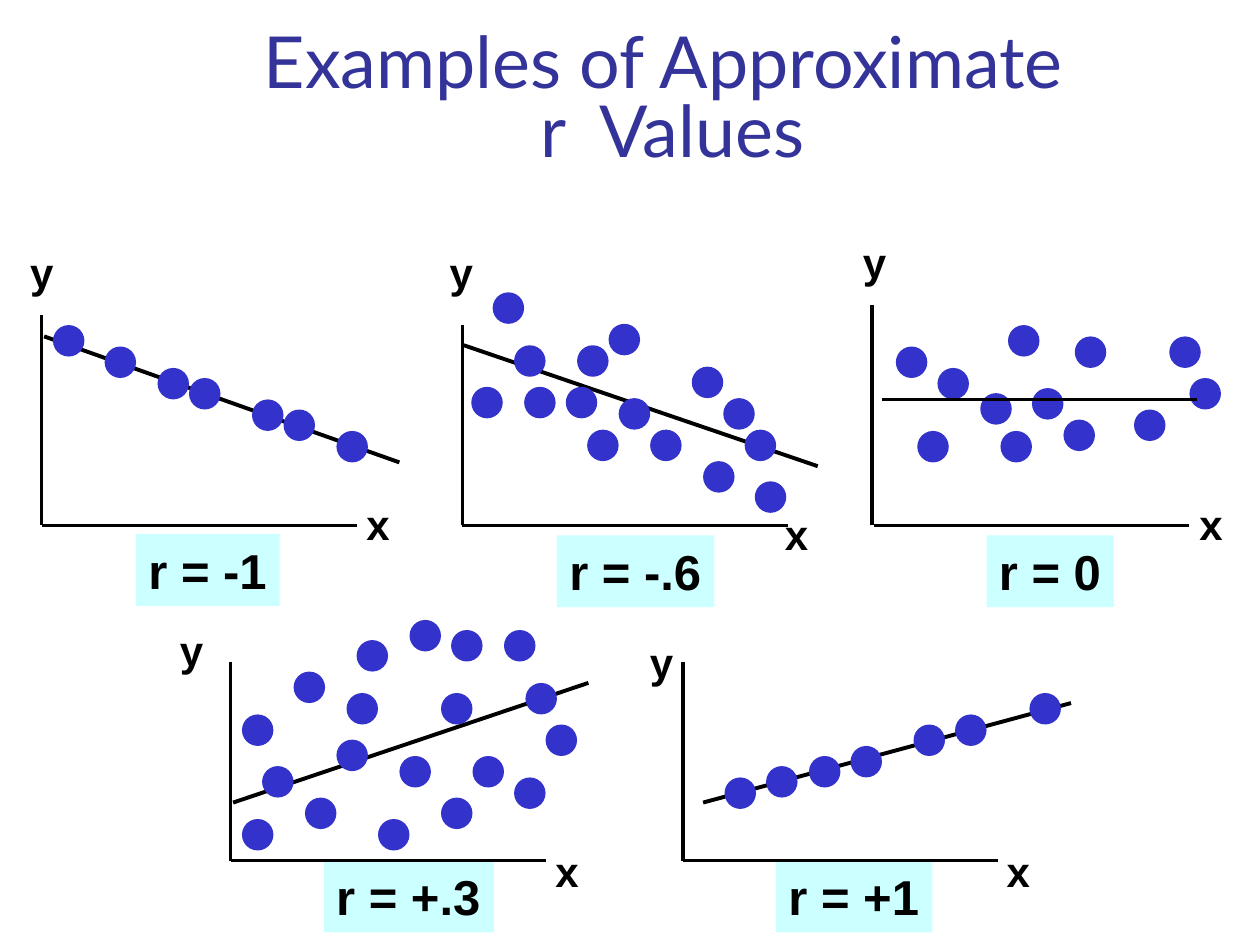
from pptx import Presentation
from pptx.dml.color import RGBColor
from pptx.enum.shapes import MSO_CONNECTOR, MSO_SHAPE
from pptx.enum.text import MSO_ANCHOR, MSO_AUTO_SIZE, PP_ALIGN
from pptx.oxml import parse_xml
from pptx.oxml.ns import nsdecls
from pptx.util import Inches, Pt

BLACK = RGBColor(0x00, 0x00, 0x00)
TITLE_BLUE = RGBColor(0x33, 0x33, 0x99)
DOT_BLUE = RGBColor(0x33, 0x33, 0xCC)
PALE_CYAN = RGBColor(0xCC, 0xFF, 0xFF)

DOT = 0.25            # dot diameter
LETTER = (0.39, 0.5)  # size of an axis letter box
LABEL_H = 0.57

TITLE = "Examples of Approximate \vr  Values"

# Each plot, in inches: axes as (x of y-axis, top, bottom, x-axis start, x-axis end),
# trend as (x1, y1, x2, y2), label as (left, top, width), dots as (left, top)
PLOTS = [
    {"r": "r = -1", "label": (1.08, 4.24, 1.14),
     "axes": (0.33, 2.5, 4.17, 0.33, 2.83), "trend": (0.35, 2.67, 3.17, 3.67),
     "y": (0.14, 1.91), "x": (2.81, 3.91),
     "dots": [(0.42, 2.58), (0.83, 2.75), (1.25, 2.92), (1.5, 3), (2, 3.17),
              (2.25, 3.25), (2.67, 3.42)]},
    {"r": "r = -.6", "label": (4.42, 4.25, 1.25),
     "axes": (3.67, 2.58, 4.17, 3.67, 6.25), "trend": (3.68, 2.74, 6.49, 3.7),
     "y": (3.47, 1.91), "x": (6.13, 3.99),
     "dots": [(3.74, 3.07), (3.91, 2.32), (4.08, 2.74), (4.16, 3.07), (4.49, 3.07),
              (4.58, 2.74), (4.66, 3.41), (4.83, 2.57), (4.91, 3.16), (5.16, 3.41),
              (5.49, 2.91), (5.58, 3.66), (5.74, 3.16), (5.91, 3.41), (5.99, 3.82)]},
    {"r": "r = 0", "label": (7.83, 4.25, 1.01),
     "axes": (6.92, 2.42, 4.17, 6.94, 9.44), "trend": (7, 3.17, 9.5, 3.17),
     "trend_on_top": True,
     "y": (6.75, 1.83), "x": (9.42, 3.91),
     "dots": [(7.11, 2.75), (7.28, 3.42), (7.44, 2.92), (7.78, 3.12), (7.94, 3.42),
              (8, 2.58), (8.19, 3.08), (8.44, 3.33), (8.53, 2.67), (9, 3.25),
              (9.28, 2.67), (9.44, 3)]},
    {"r": "r = +.3", "label": (2.57, 6.83, 1.35),
     "axes": (1.83, 5.25, 6.83, 1.83, 4.33), "trend": (1.85, 6.37, 4.67, 5.42),
     "y": (1.33, 4.91), "x": (4.31, 6.66),
     "dots": [(1.92, 5.67), (1.92, 6.5), (2.08, 6.08), (2.33, 5.33), (2.42, 6.33),
              (2.67, 5.87), (2.75, 5.5), (2.83, 5.08), (3, 6.5), (3.17, 6),
              (3.25, 4.92), (3.5, 5.5), (3.5, 6.33), (3.58, 5), (3.75, 6),
              (4, 5), (4.08, 6.17), (4.17, 5.42), (4.33, 5.75)]},
    {"r": "r = +1", "label": (6.16, 6.83, 1.24),
     "axes": (5.42, 5.25, 6.83, 5.42, 7.92), "trend": (5.58, 6.37, 8.5, 5.58),
     "y": (5.06, 5), "x": (7.89, 6.66),
     "dots": [(5.75, 6.17), (6.08, 6.08), (6.42, 6), (6.75, 5.92), (7.25, 5.75),
              (7.58, 5.67), (8.17, 5.5)]},
]


def add_line(s, x1, y1, x2, y2, width=2):
    line = s.shapes.add_connector(
        MSO_CONNECTOR.STRAIGHT, Inches(x1), Inches(y1), Inches(x2), Inches(y2))
    line.line.color.rgb = BLACK
    line.line.width = Pt(width)
    line._element.spPr.append(parse_xml(f"<a:effectLst {nsdecls('a')}/>"))


def add_shape(s, kind, left, top, width, height, fill):
    sp = s.shapes.add_shape(
        kind, Inches(left), Inches(top), Inches(width), Inches(height))
    sp.shadow.inherit = False
    sp.fill.solid()
    sp.fill.fore_color.rgb = fill
    sp.line.fill.background()
    return sp


def set_text(sp, text, size, font="Arial", color=BLACK, bold=True, align=PP_ALIGN.LEFT):
    tf = sp.text_frame
    tf.text = text
    tf.word_wrap = False
    tf.vertical_anchor = MSO_ANCHOR.TOP
    tf.auto_size = MSO_AUTO_SIZE.SHAPE_TO_FIT_TEXT
    p = tf.paragraphs[0]
    p.alignment = align
    for r in p.runs:
        r.font.name = font
        r.font.size = Pt(size)
        r.font.bold = bold
        r.font.color.rgb = color
    return tf


def add_textbox(s, left, top, width, height):
    return s.shapes.add_textbox(
        Inches(left), Inches(top), Inches(width), Inches(height))


def add_plot(s, plot):
    # Label with the r value
    left, top, width = plot["label"]
    sp = add_shape(s, MSO_SHAPE.RECTANGLE, left, top, width, LABEL_H, PALE_CYAN)
    set_text(sp, plot["r"], 28)

    # Axes and their letters
    axis_x, top, bottom, start, end = plot["axes"]
    add_line(s, axis_x, top, axis_x, bottom)
    add_line(s, start, bottom, end, bottom)
    for letter in "yx":
        set_text(add_textbox(s, *plot[letter], *LETTER), letter, 24)

    # Trend line and dots
    on_top = plot.get("trend_on_top", False)
    if not on_top:
        add_line(s, *plot["trend"], width=2.25)
    for x, y in plot["dots"]:
        add_shape(s, MSO_SHAPE.OVAL, x, y, DOT, DOT, DOT_BLUE)
    if on_top:
        add_line(s, *plot["trend"])


def main():
    prs = Presentation()
    prs.slide_width, prs.slide_height = Inches(10), Inches(7.5)
    s = prs.slides.add_slide(prs.slide_layouts[6])

    # Title
    tf = set_text(add_textbox(s, 1.08, 0.33, 8.52, 1.08), TITLE, 41, "Lato",
                  TITLE_BLUE, False, PP_ALIGN.CENTER)
    tf.word_wrap = True
    tf.auto_size = MSO_AUTO_SIZE.NONE
    tf.vertical_anchor = MSO_ANCHOR.BOTTOM
    tf.paragraphs[0].line_spacing = 0.8

    for plot in PLOTS:
        add_plot(s, plot)
    prs.save("out.pptx")


if __name__ == "__main__":
    main()
